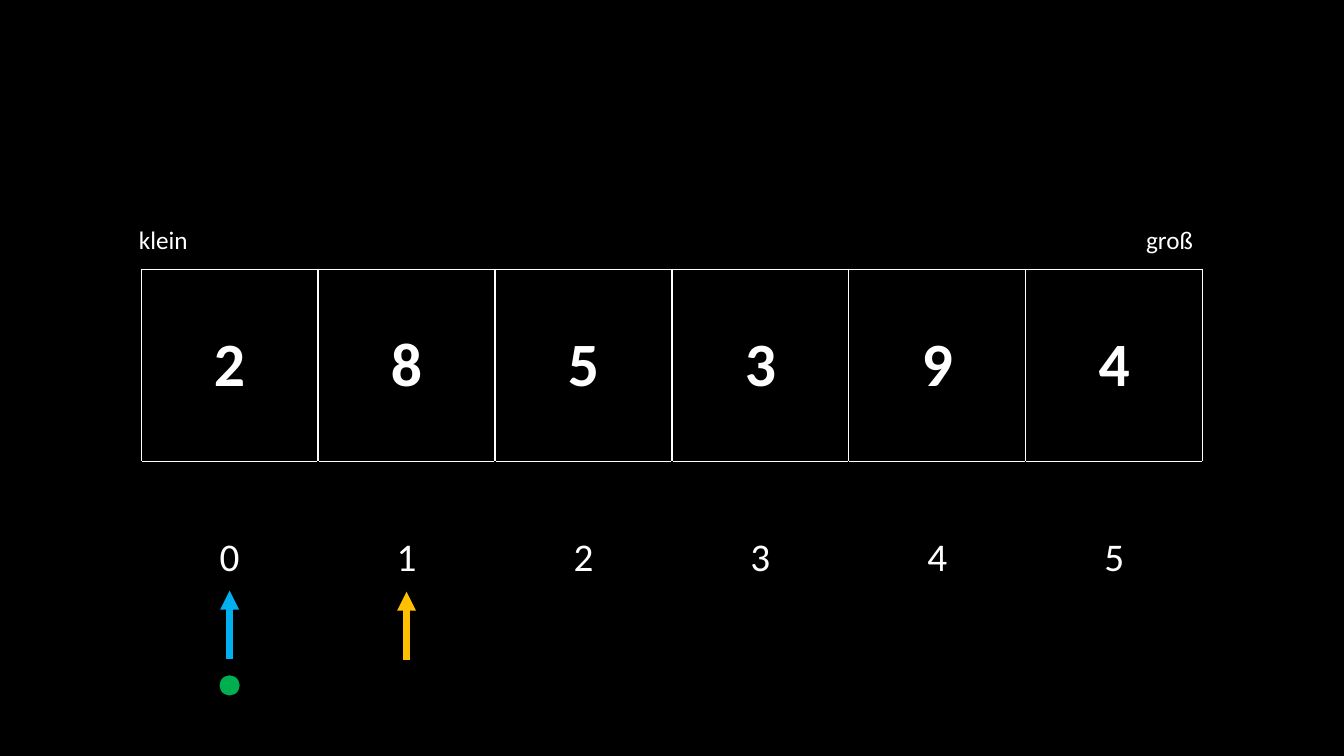
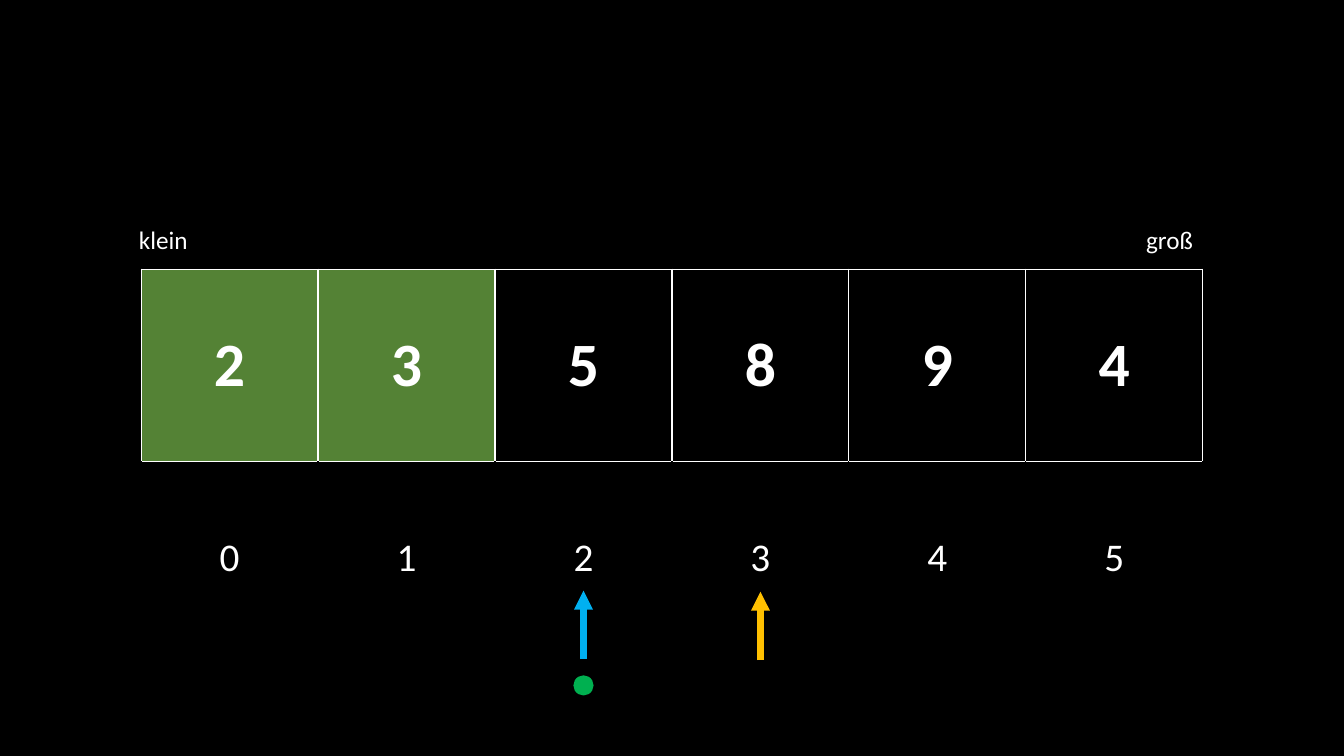
from dataclasses import dataclass
from typing import Any

from pptx import Presentation
from pptx.dml.color import RGBColor
from pptx.enum.shapes import MSO_CONNECTOR as Connector, MSO_SHAPE as Preset
from pptx.enum.text import MSO_ANCHOR as Anchor, MSO_AUTO_SIZE as AutoSize, PP_ALIGN as Align
from pptx.oxml.ns import qn
from pptx.util import Inches, Pt
from lxml.etree import SubElement

WIDTH, HEIGHT = 13.33, 7.5
TABLE_LEFT, TABLE_TOP, TABLE_WIDTH = 1.4, 2.67, 10.53
COLUMNS = 6
COLUMN_WIDTH = TABLE_WIDTH / COLUMNS
ROW_HEIGHT = 1.91
LABEL_TOP, LABEL_WIDTH, LABEL_HEIGHT = 2.18, 1.51, 0.4
ARROW_LENGTH, DOT_TOP, DOT_SIZE = 0.68, 6.7, 0.2

BLACK, WHITE = "000000", "FFFFFF"
BLUE, AMBER, GREEN, SORTED_GREEN = "00B0F0", "FFC000", "00B050", "548235"

VALUE_FONT = {"name": "Calibri", "size": Pt(44), "bold": True}
INDEX_FONT = {"name": "Calibri", "size": Pt(28), "bold": False}
LABEL_FONT = {"name": "Calibri", "size": Pt(18)}
VALUE_BORDERS = {"L": WHITE, "R": WHITE, "T": WHITE, "B": WHITE}
INDEX_BORDERS = {"L": BLACK, "R": BLACK, "T": WHITE, "B": BLACK}


@dataclass(frozen=True)
class SortStep:
    values: tuple[int, ...]
    sorted_count: int
    position: int
    candidate: int


@dataclass(frozen=True)
class Label:
    text: str
    left: float
    align: Align


@dataclass(frozen=True)
class Pointer:
    column: int
    tip: float
    color: str


STEPS = (
    SortStep((2, 8, 5, 3, 9, 4), sorted_count=0, position=0, candidate=1),
    SortStep((2, 3, 5, 8, 9, 4), sorted_count=2, position=2, candidate=3),
)
LABELS = (
    Label("groß", TABLE_LEFT + TABLE_WIDTH - LABEL_WIDTH, Align.RIGHT),
    Label("klein", 1.28, Align.LEFT),
)


def rgb(color: str) -> RGBColor:
    return RGBColor.from_string(color)


def column_center(column: int) -> float:
    return TABLE_LEFT + COLUMN_WIDTH * (column + 0.5)


def write(frame: Any, text: str, font: dict[str, Any], align: Align) -> None:
    para = frame.paragraphs[0]
    para.alignment = align
    span = para.add_run()
    span.text = text
    for name, value in font.items():
        setattr(span.font, name, value)
    span.font.color.rgb = rgb(WHITE)


def set_borders(cell: Any, borders: dict[str, str]) -> None:
    properties = cell._tc.get_or_add_tcPr()
    for side, color in borders.items():
        line = SubElement(properties, qn(f"a:ln{side}"), w=str(Pt(1)))
        fill = SubElement(line, qn("a:solidFill"))
        SubElement(fill, qn("a:srgbClr"), val=color)


def fill_cell(cell: Any, text: str, font: dict[str, Any],
              borders: dict[str, str], color: str | None = None) -> None:
    cell.vertical_anchor = Anchor.MIDDLE
    write(cell.text_frame, text, font, Align.CENTER)
    set_borders(cell, borders)
    if color:
        cell.fill.solid()
        cell.fill.fore_color.rgb = rgb(color)
    else:
        cell.fill.background()


def add_array(page: Any, step: SortStep) -> None:
    table = page.shapes.add_table(
        2, COLUMNS, Inches(TABLE_LEFT), Inches(TABLE_TOP),
        Inches(TABLE_WIDTH), Inches(2 * ROW_HEIGHT)).table
    table.first_row = table.horz_banding = False
    for index, value in enumerate(step.values):
        color = SORTED_GREEN if index < step.sorted_count else None
        fill_cell(table.cell(0, index), str(value), VALUE_FONT, VALUE_BORDERS, color)
        fill_cell(table.cell(1, index), str(index), INDEX_FONT, INDEX_BORDERS)


def add_label(page: Any, label: Label) -> None:
    box = page.shapes.add_textbox(
        Inches(label.left), Inches(LABEL_TOP), Inches(LABEL_WIDTH), Inches(LABEL_HEIGHT))
    box.text_frame.word_wrap = True
    box.text_frame.auto_size = AutoSize.SHAPE_TO_FIT_TEXT
    write(box.text_frame, label.text, LABEL_FONT, label.align)


def add_pointer(page: Any, pointer: Pointer) -> None:
    center = Inches(column_center(pointer.column))
    arrow = page.shapes.add_connector(
        Connector.STRAIGHT, center, Inches(pointer.tip + ARROW_LENGTH),
        center, Inches(pointer.tip))
    arrow.line.color.rgb = rgb(pointer.color)
    arrow.line.width = Pt(4.5)
    SubElement(arrow.line._get_or_add_ln(), qn("a:tailEnd"), type="triangle")
    SubElement(arrow._element.spPr, qn("a:effectLst"))


def add_dot(page: Any, column: int) -> None:
    dot = page.shapes.add_shape(
        Preset.OVAL, Inches(column_center(column) - DOT_SIZE / 2), Inches(DOT_TOP),
        Inches(DOT_SIZE), Inches(DOT_SIZE))
    dot.shadow.inherit = False
    dot.fill.solid()
    dot.fill.fore_color.rgb = rgb(GREEN)
    dot.line.fill.background()


def add_step(deck: Any, step: SortStep) -> None:
    page = deck.slides.add_slide(deck.slide_layouts[6])
    add_array(page, step)
    for label in LABELS:
        add_label(page, label)
    add_pointer(page, Pointer(step.position, 5.86, BLUE))
    add_pointer(page, Pointer(step.candidate, 5.87, AMBER))
    add_dot(page, step.position)


def main() -> None:
    deck = Presentation()
    deck.slide_width, deck.slide_height = Inches(WIDTH), Inches(HEIGHT)
    backdrop = deck.slide_master.background.fill
    backdrop.solid()
    backdrop.fore_color.rgb = rgb(BLACK)
    for step in STEPS:
        add_step(deck, step)
    deck.save("out.pptx")


if __name__ == "__main__":
    main()
